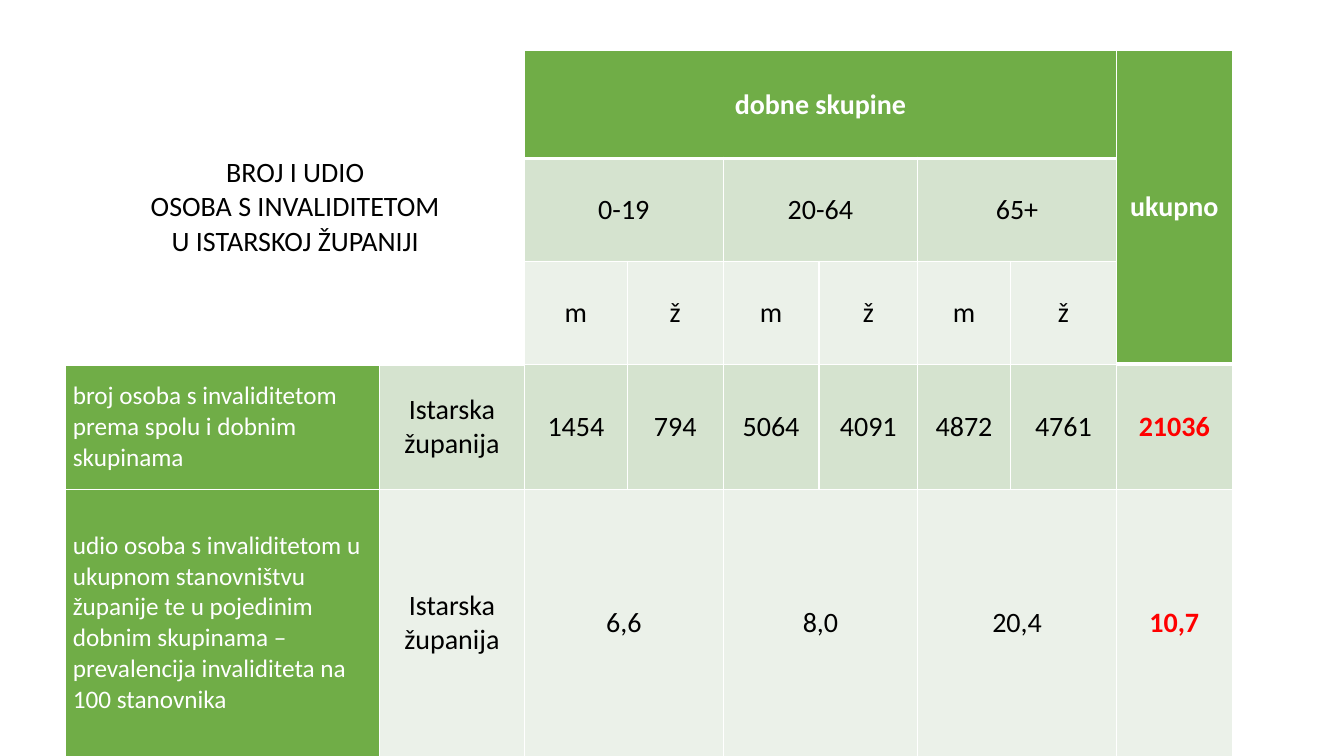
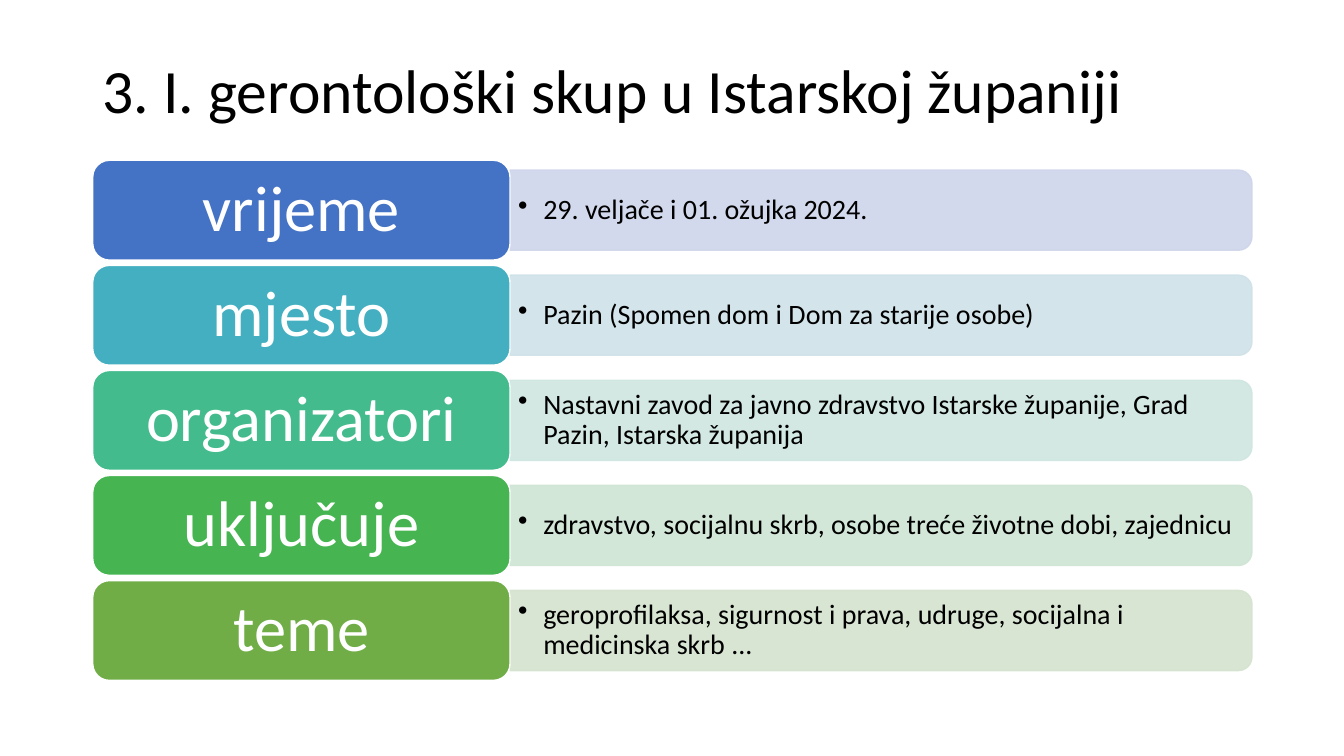
"""Build two slides on disability figures and a gerontology meeting in Istria."""
from lxml import etree
from pptx import Presentation
from pptx import util as u
from pptx.dml.color import RGBColor
from pptx.enum import shapes, text
from pptx.oxml import ns

WHITE = RGBColor(0xFF, 0xFF, 0xFF)
BLACK = RGBColor(0x00, 0x00, 0x00)
RED = RGBColor(0xFF, 0x00, 0x00)
GREEN = RGBColor(0x70, 0xAD, 0x47)
BAND_DARK = RGBColor(0xD5, 0xE3, 0xCF)
BAND_LIGHT = RGBColor(0xEB, 0xF1, 0xE9)

COLUMN_SHARES = [23.33, 10.8, 7.65, 7.13, 7.13, 7.35, 6.9, 7.88, 8.63]
ROW_SHARES = [14.27, 13.6, 13.6, 16.53, 35.33]
FIRST_DATA_ROW = 3
TABLE_ROWS = [
    ["BROJ I UDIO\nOSOBA S INVALIDITETOM\nU ISTARSKOJ ŽUPANIJI", "",
     "dobne skupine", "", "", "", "", "", "ukupno"],
    ["", "", "0-19", "", "20-64", "", "65+", "", ""],
    ["", "", "m", "ž", "m", "ž", "m", "ž", ""],
    ["broj osoba s invaliditetom prema spolu i dobnim skupinama",
     "Istarska županija", "1454", "794", "5064", "4091", "4872", "4761", "21036"],
    ["udio osoba s invaliditetom u ukupnom stanovništvu županije te u pojedinim "
     "dobnim skupinama – prevalencija invaliditeta na 100 stanovnika",
     "Istarska županija", "6,6", "", "8,0", "", "20,4", "", "10,7"],
]
MERGES = [(0, 0, 2, 1), (0, 2, 0, 7), (0, 8, 2, 8)] + [
    (row, column, row, column + 1) for row in (1, 4) for column in (2, 4, 6)]

MEETING = [
    ("vrijeme", "29. veljače i 01. ožujka 2024.",
     RGBColor(0x44, 0x72, 0xC4), RGBColor(0xCF, 0xD5, 0xEA)),
    ("mjesto", "Pazin (Spomen dom i Dom za starije osobe)",
     RGBColor(0x43, 0xAF, 0xC0), RGBColor(0xCF, 0xE2, 0xE8)),
    ("organizatori",
     "Nastavni zavod za javno zdravstvo Istarske županije, Grad Pazin, Istarska županija",
     RGBColor(0x43, 0xBB, 0x8D), RGBColor(0xCF, 0xE6, 0xE0)),
    ("uključuje", "zdravstvo, socijalnu skrb, osobe treće životne dobi, zajednicu",
     RGBColor(0x45, 0xB4, 0x51), RGBColor(0xCF, 0xE5, 0xD4)),
    ("teme", "geroprofilaksa, sigurnost i prava, udruge, socijalna i medicinska skrb ...",
     GREEN, BAND_DARK),
]


def cell_style(row, column):
    """Return fill, text colour, size, bold and alignment for a table position."""
    band = BAND_DARK if row % 2 else BAND_LIGHT
    center, left = text.PP_ALIGN.CENTER, text.PP_ALIGN.LEFT
    if row == 0:
        if column == 0:
            return WHITE, BLACK, 20, False, center
        return GREEN, WHITE, 20, True, center
    if row >= FIRST_DATA_ROW and column == 0:
        return GREEN, WHITE, 18, False, left
    if row >= FIRST_DATA_ROW and column == len(COLUMN_SHARES) - 1:
        return band, RED, 20, True, center
    return band, BLACK, 20, False, center


class Deck:
    """Hold the shared style and the current slide; lengths are percent of the slide."""

    FONT = "Calibri"
    TITLE_ONLY, BLANK = 5, 6

    def __init__(self):
        """Start an empty wide presentation."""
        self.presentation = Presentation()
        self.presentation.slide_width = u.Inches(13.33)
        self.presentation.slide_height = u.Inches(7.5)
        self.slide = None

    def across(self, share):
        """Convert a share of the slide width to a length."""
        return round(self.presentation.slide_width * share / 100)

    def down(self, share):
        """Convert a share of the slide height to a length."""
        return round(self.presentation.slide_height * share / 100)

    def box(self, left, top, width, height):
        """Convert four shares to a position and size."""
        return self.across(left), self.down(top), self.across(width), self.down(height)

    def add_slide(self, layout):
        """Add a slide and make it current."""
        layouts = self.presentation.slide_layouts
        self.slide = self.presentation.slides.add_slide(layouts[layout])

    def set_text(self, frame, words, size, color, bold=False,
                 align=text.PP_ALIGN.LEFT, spacing=0.9, bullet=False):
        """Fill a text frame with one style."""
        frame.text = words
        for paragraph in frame.paragraphs:
            paragraph.alignment = align
            paragraph.line_spacing = spacing
            if bullet:
                self.add_bullet(paragraph)
            font = paragraph.font
            font.name, font.size, font.bold = self.FONT, u.Pt(size), bold
            font.color.rgb = color

    def set_middle(self, frame):
        """Wrap a frame's text and centre it vertically."""
        frame.word_wrap = True
        frame.vertical_anchor = text.MSO_ANCHOR.MIDDLE

    def add_bullet(self, paragraph):
        """Give a paragraph a round bullet with a hanging indent."""
        properties = paragraph._p.get_or_add_pPr()
        indent = u.Inches(0.25)
        properties.set("marL", str(indent))
        properties.set("indent", str(-indent))
        etree.SubElement(properties, ns.qn("a:buChar"), char="•")

    def title(self, words):
        """Place and fill the title placeholder."""
        title = self.slide.shapes.title
        title.left, title.top, title.width, title.height = self.box(6.9, 5.33, 86.25, 14)
        self.set_text(title.text_frame, words, 44, BLACK)
        self.set_middle(title.text_frame)
        title.text_frame.auto_size = text.MSO_AUTO_SIZE.NONE

    def shape(self, kind, box, fill, line):
        """Add a preset shape with a solid fill and a thin line."""
        shape = self.slide.shapes.add_shape(kind, *box)
        shape.shadow.inherit = False
        shape.fill.solid()
        shape.fill.fore_color.rgb = fill
        shape.line.color.rgb = line
        shape.line.width = u.Pt(1)
        return shape

    def label(self, words, color, box):
        """Add a rounded label with large white text."""
        label = self.shape(shapes.MSO_SHAPE.ROUNDED_RECTANGLE, box, color, WHITE)
        self.set_text(label.text_frame, words, 46, WHITE, align=text.PP_ALIGN.CENTER)
        self.set_middle(label.text_frame)

    def bar(self, words, color, box):
        """Add a pale bar, rounded on the right, with a bulleted text."""
        left, top, width, height = box
        shift = (width - height) // 2
        upright = left + shift, top - shift, height, width
        bar = self.shape(shapes.MSO_SHAPE.ROUND_2_SAME_RECTANGLE, upright, color, color)
        bar.rotation = 90
        for tint in bar._element.spPr.iter(ns.qn("a:srgbClr")):
            etree.SubElement(tint, ns.qn("a:alpha"), val="90000")
        frame = self.slide.shapes.add_textbox(*box).text_frame
        frame.margin_left = frame.margin_right = u.Inches(0.08)
        frame.margin_top = frame.margin_bottom = u.Inches(0.04)
        self.set_text(frame, words, 20, BLACK, bullet=True)
        self.set_middle(frame)

    def borders(self, cell, bottom):
        """Draw white borders round a cell, the lower one in its own width."""
        properties = cell._tc.get_or_add_tcPr()
        widths = {"a:lnL": 1, "a:lnR": 1, "a:lnT": 1, "a:lnB": bottom}
        for place, (tag, width) in enumerate(widths.items()):
            line = etree.Element(ns.qn(tag), w=str(u.Pt(width)))
            fill = etree.SubElement(line, ns.qn("a:solidFill"))
            etree.SubElement(fill, ns.qn("a:srgbClr"), val=str(WHITE))
            properties.insert(place, line)

    def table(self, rows, merges, left, top):
        """Add the table, styled by position."""
        box = self.box(left, top, sum(COLUMN_SHARES), sum(ROW_SHARES))
        table = self.slide.shapes.add_table(len(rows), len(rows[0]), *box).table
        table.first_row = table.horz_banding = False
        for column, share in zip(table.columns, COLUMN_SHARES):
            column.width = self.across(share)
        for row, share in zip(table.rows, ROW_SHARES):
            row.height = self.down(share)
        for top_row, first, bottom_row, last in merges:
            table.cell(top_row, first).merge(table.cell(bottom_row, last))
        for row, values in enumerate(rows):
            for column, words in enumerate(values):
                cell = table.cell(row, column)
                if not cell.is_spanned:
                    self.fill_cell(cell, words, *cell_style(row, column))
                self.borders(cell, 1 if row else 3)

    def fill_cell(self, cell, words, fill, color, size, bold, align):
        """Fill one cell with colour and text."""
        cell.fill.solid()
        cell.fill.fore_color.rgb = fill
        cell.margin_left = cell.margin_right = u.Inches(0.07)
        cell.margin_top = cell.margin_bottom = 0
        cell.vertical_anchor = text.MSO_ANCHOR.MIDDLE
        self.set_text(cell.text_frame, words, size, color, bold, align, spacing=1.0)


def main():
    """Build both slides and save them."""
    deck = Deck()
    deck.add_slide(Deck.BLANK)
    deck.table(TABLE_ROWS, MERGES, 4.9, 6.7)

    deck.add_slide(Deck.TITLE_ONLY)
    deck.title("3. I. gerontološki skup u Istarskoj županiji")
    label_height, bar_height, pitch = 13.2, 10.6, 13.9
    inset = (label_height - bar_height) / 2
    for index, (topic, details, color, tint) in enumerate(MEETING):
        top = 21.2 + index * pitch
        deck.bar(details, tint, deck.box(37.95, top + inset, 55.2, bar_height))
        deck.label(topic, color, deck.box(6.9, top, 31.05, label_height))
    deck.presentation.save("out.pptx")


if __name__ == "__main__":
    main()
